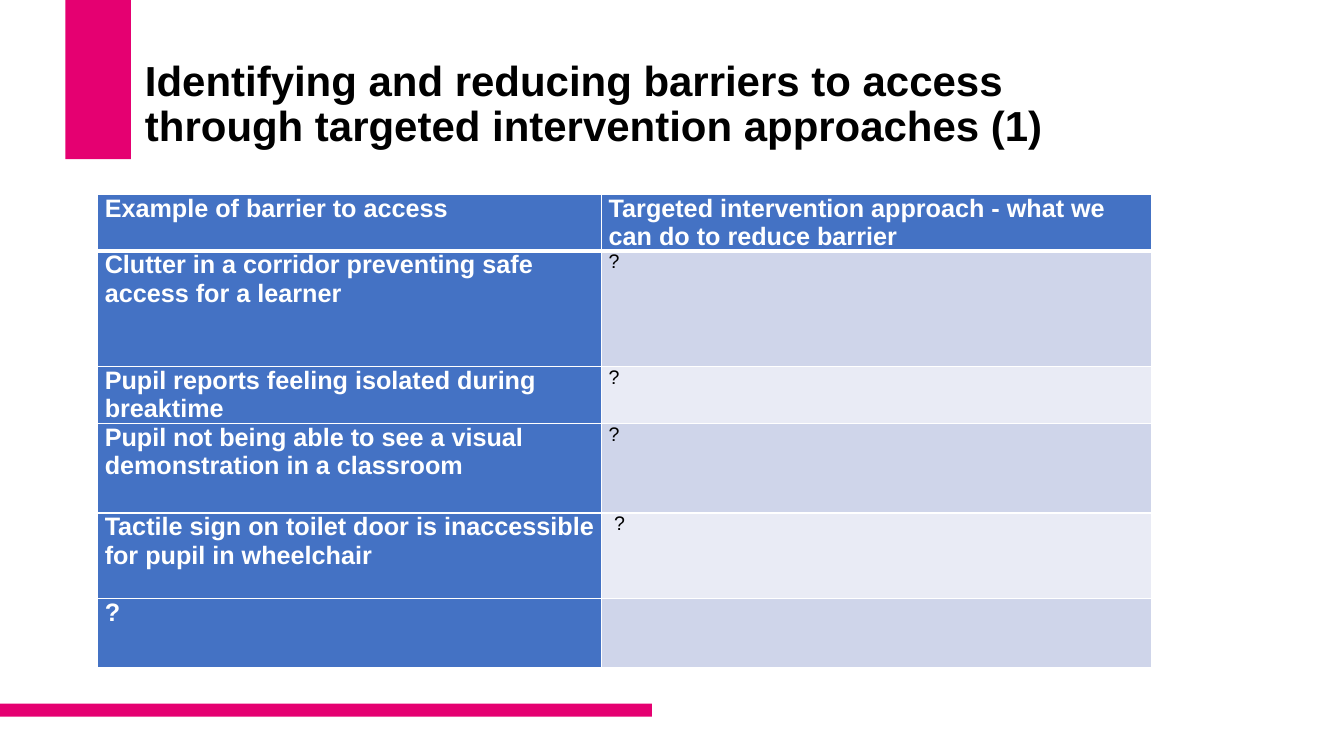
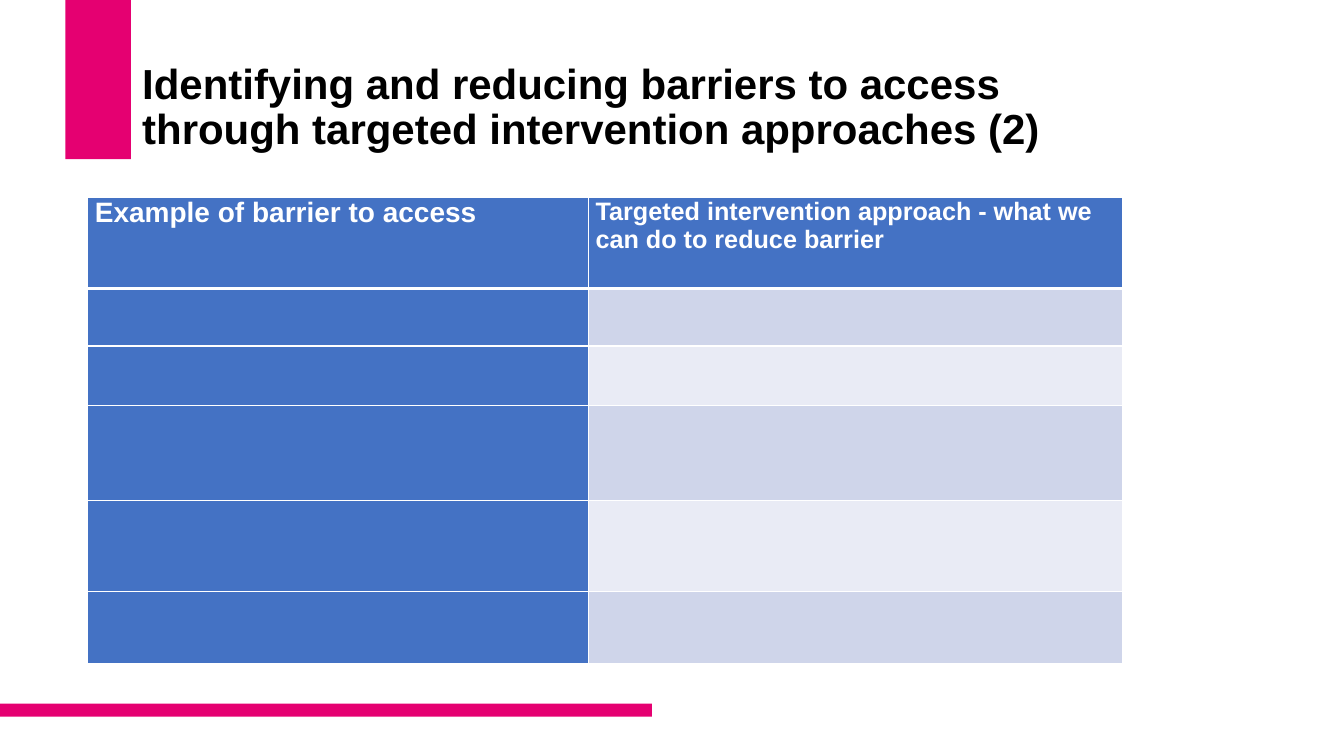
import pptx
import pptx.dml.color
import pptx.enum.shapes
import pptx.enum.text
import pptx.oxml
import pptx.oxml.ns
import pptx.util

Cm = pptx.util.Cm
Pt = pptx.util.Pt
RGBColor = pptx.dml.color.RGBColor

PINK = RGBColor(0xE5, 0x00, 0x71)
BLUE = RGBColor(0x44, 0x72, 0xC4)
BAND_COLOURS = (RGBColor(0xCF, 0xD5, 0xEA), RGBColor(0xE9, 0xEB, 0xF5))
WHITE = RGBColor(0xFF, 0xFF, 0xFF)
BLACK = RGBColor(0x00, 0x00, 0x00)
FONT = "Arial"

# Left, top, width, height in centimetres
PINK_BANDS = ((1.65, 0, 1.65, 4.01), (0, 17.73, 16.43, 0.33))
TITLE_SIZE = (24.38, 3.68)

HEADINGS = (
    "Example of barrier to access",
    "Targeted intervention approach - what we can do to reduce barrier",
)
PAGES = (
    dict(
        title="Identifying and reducing barriers to access through targeted intervention approaches (1) ",
        title_at=(3.4, 0.81),
        table_at=(2.46, 4.9),
        widths=(12.7, 13.87),
        heights=(1.24, 2.92, 1.4, 2.26, 2.16, 1.73),
        heading_sizes=(18, 18),
        rows=(
            ("Clutter in a corridor preventing safe access for a learner", "?"),
            ("Pupil reports feeling isolated during breaktime", "?"),
            ("Pupil not being able to see a visual demonstration in a classroom", "?"),
            ("Tactile sign on toilet door is inaccessible for pupil in wheelchair", " ?"),
            ("?", ""),
        ),
    ),
    dict(
        title="Identifying and reducing barriers to access through targeted intervention approaches (2) ",
        title_at=(3.33, 0.89),
        table_at=(2.21, 4.98),
        widths=(12.62, 13.46),
        heights=(2.29, 1.45, 1.5, 2.39, 2.29, 1.83),
        heading_sizes=(20, 18),
        rows=(("", ""),) * 5,
    ),
)


def write_text(frame, text, size=18, bold=True, colour=WHITE, line_spacing=None, space_after=None):
    """Fill the first paragraph of a text frame and format it."""
    para = frame.paragraphs[0]
    para.alignment = pptx.enum.text.PP_ALIGN.LEFT
    para.line_spacing = line_spacing
    para.space_after = space_after
    para.font.size = Pt(size)
    if text:
        span = para.add_run()
        span.text = text
        span.font.name = FONT
        span.font.size = Pt(size)
        span.font.bold = bold
        span.font.color.rgb = colour


def add_layout_bands(layout, page):
    """Draw the pink bands and move them behind the layout's placeholders."""
    for index, box in enumerate(PINK_BANDS):
        band = page.shapes.add_shape(
            pptx.enum.shapes.MSO_SHAPE.RECTANGLE, *(Cm(length) for length in box)
        )
        band.shadow.inherit = False
        band.fill.solid()
        band.fill.fore_color.rgb = PINK
        band.line.fill.background()
        layout.shapes.element.insert(2 + index, band.element)


def place_title(page, text, left, top):
    title = page.shapes.title
    title.left, title.top = Cm(left), Cm(top)
    title.width, title.height = (Cm(length) for length in TITLE_SIZE)
    frame = title.text_frame
    frame.word_wrap = True
    frame.auto_size = pptx.enum.text.MSO_AUTO_SIZE.NONE
    frame.vertical_anchor = pptx.enum.text.MSO_ANCHOR.MIDDLE
    write_text(frame, text, size=30, colour=BLACK, line_spacing=0.9)


def set_borders(cell, **widths):
    """Give the cell white borders; widths are points by side (L, R, T, B)."""
    properties = cell._tc.get_or_add_tcPr()
    for side in "LRTB":
        properties.append(pptx.oxml.parse_xml(
            f'<a:ln{side} {pptx.oxml.ns.nsdecls("a")} w="{Pt(widths.get(side, 1))}">'
            f'<a:solidFill><a:srgbClr val="{WHITE}"/></a:solidFill></a:ln{side}>'
        ))


def format_cell(cell, row, column):
    cell.margin_left = cell.margin_right = Cm(0.18)
    cell.margin_top = cell.margin_bottom = 0
    # A thick rule separates the heading row from the body
    set_borders(cell, T=3 if row == 1 else 1, B=3 if row == 0 else 1)
    cell.fill.solid()
    is_heading = row == 0 or column == 0
    cell.fill.fore_color.rgb = BLUE if is_heading else BAND_COLOURS[(row - 1) % 2]


def place_table(page, left, top, widths, heights, heading_sizes, rows):
    box = page.shapes.add_table(
        len(heights), len(widths), Cm(left), Cm(top), Cm(sum(widths)), Cm(sum(heights))
    )
    table = box.table
    for column, width in zip(table.columns, widths):
        column.width = Cm(width)
    for row, height in zip(table.rows, heights):
        row.height = Cm(height)

    for row, texts in enumerate((HEADINGS, *rows)):
        for column, text in enumerate(texts):
            cell = table.cell(row, column)
            format_cell(cell, row, column)
            if row == 0:
                style = dict(size=heading_sizes[column])
            elif column == 0:
                style = dict(size=18)
            else:
                style = dict(size=14, bold=False, colour=BLACK)
            write_text(cell.text_frame, text, space_after=Pt(8), **style)


def build_page(page, title, title_at, table_at, **table_parts):
    place_title(page, title, *title_at)
    place_table(page, *table_at, **table_parts)


def main():
    deck = pptx.Presentation()
    deck.slide_width, deck.slide_height = Cm(33.87), Cm(19.05)
    layout = deck.slide_layouts.get_by_name("Title Only")
    pages = [deck.slides.add_slide(layout) for _ in PAGES]
    add_layout_bands(layout, pages[0])
    for page, content in zip(pages, PAGES):
        build_page(page, **content)
    deck.save("out.pptx")


if __name__ == "__main__":
    main()
